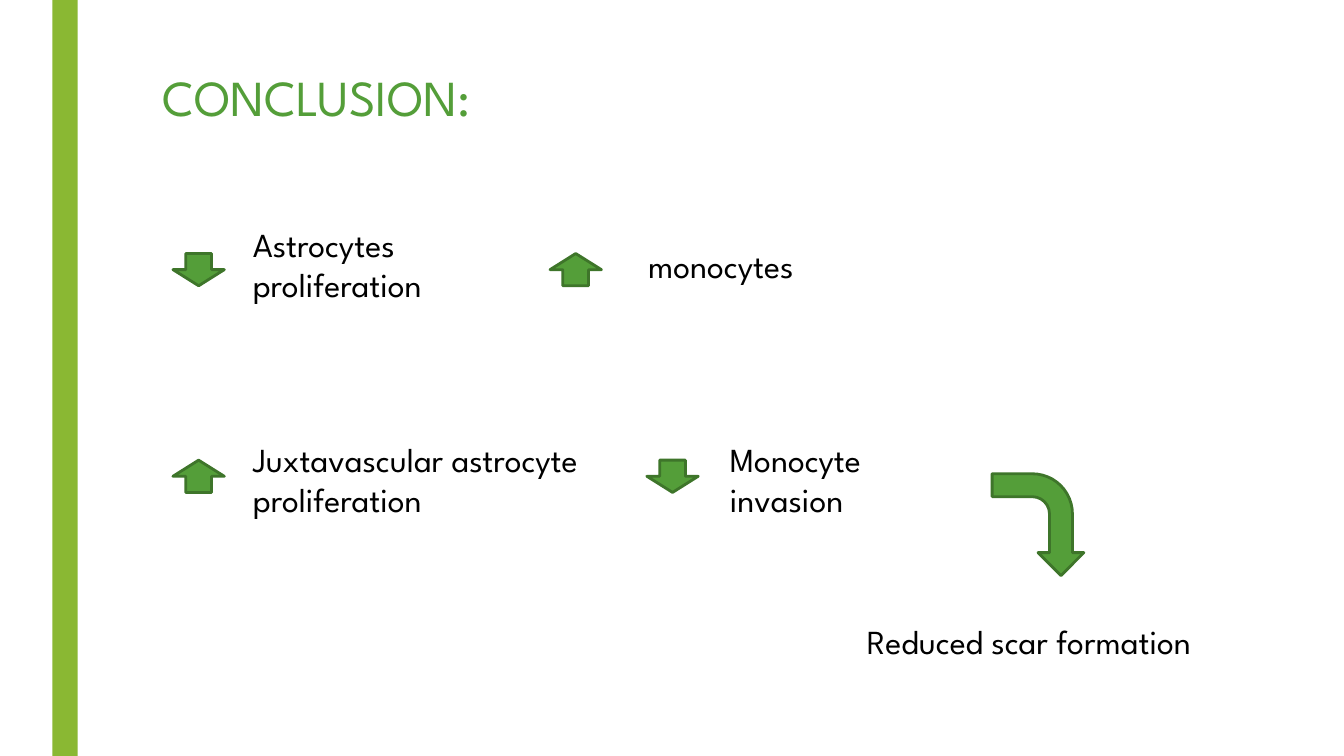
from pptx import Presentation
from pptx.dml.color import RGBColor
from pptx.enum.shapes import MSO_SHAPE
from pptx.enum.text import MSO_ANCHOR, MSO_AUTO_SIZE, PP_ALIGN
from pptx.util import Inches, Pt

BAR, ARROW, BENT_ARROW = MSO_SHAPE.RECTANGLE, MSO_SHAPE.RIGHT_ARROW, MSO_SHAPE.BENT_ARROW
TOP, LEFT, GROW = MSO_ANCHOR.TOP, PP_ALIGN.LEFT, MSO_AUTO_SIZE.SHAPE_TO_FIT_TEXT
DOWN, UP = 90, 270

THEME = {
    "font": "League Spartan",
    "title_size": Pt(36),
    "body_size": Pt(24),
    "line_width": Pt(2),
    "green": RGBColor(0x54, 0x9E, 0x39),
    "dark_green": RGBColor(0x3E, 0x75, 0x2A),
    "lime": RGBColor(0x8A, 0xB8, 0x33),
    "black": RGBColor(0, 0, 0),
}


def write(holder, wording, size, color):
    frame = holder.text_frame
    frame.text = wording
    for name, value in {"word_wrap": True, "auto_size": GROW, "vertical_anchor": TOP}.items():
        setattr(frame, name, value)
    paragraph = frame.paragraphs[0]
    paragraph.alignment = LEFT
    for name, value in {"name": THEME["font"], "size": THEME[size]}.items():
        setattr(paragraph.runs[0].font, name, value)
    paragraph.runs[0].font.color.rgb = THEME[color]


def draw(kind, box, fill, outline=None, rotation=0):
    figure = slide.shapes.add_shape(kind, *map(Inches, box))
    figure.shadow.inherit = False
    figure.rotation = rotation
    figure.fill.solid()
    figure.fill.fore_color.rgb = THEME[fill]
    if outline:
        figure.line.color.rgb = THEME[outline]
        figure.line.width = THEME["line_width"]
    else:
        figure.line.fill.background()


deck = Presentation()
deck.slide_width, deck.slide_height = Inches(13.33), Inches(7.5)
slide = deck.slides.add_slide(deck.slide_layouts[5])

draw(BAR, (0.52, 0, 0.25, 7.5), "lime")

title = slide.shapes.title
title_box = {"left": 1.51, "top": 0.61, "width": 3.95, "height": 0.71}
for side, length in title_box.items():
    setattr(title, side, Inches(length))
write(title, "CONCLUSION:", "title_size", "green")

findings = [
    ("Astrocytes proliferation", (2.41, 2.17, 3.04, 0.91)),
    ("monocytes", (6.33, 2.38, 2.05, 0.5)),
    ("Juxtavascular astrocyte proliferation", (2.41, 4.3, 3.92, 0.91)),
    ("Monocyte invasion", (7.14, 4.3, 2.05, 0.91)),
    ("Reduced scar formation", (8.5, 6.11, 4.31, 0.5)),
]
for wording, box in findings:
    finding = slide.shapes.add_textbox(*map(Inches, box))
    write(finding, wording, "body_size", "black")

trends = [(1.81, 2.42, DOWN), (5.55, 2.42, UP), (1.81, 4.47, UP), (6.51, 4.47, DOWN)]
for left, top, direction in trends:
    draw(ARROW, (left, top, 0.32, 0.51), "green", "dark_green", direction)

draw(BENT_ARROW, (9.79, 4.75, 1.01, 0.91), "green", "dark_green", DOWN)

deck.save("out.pptx")
